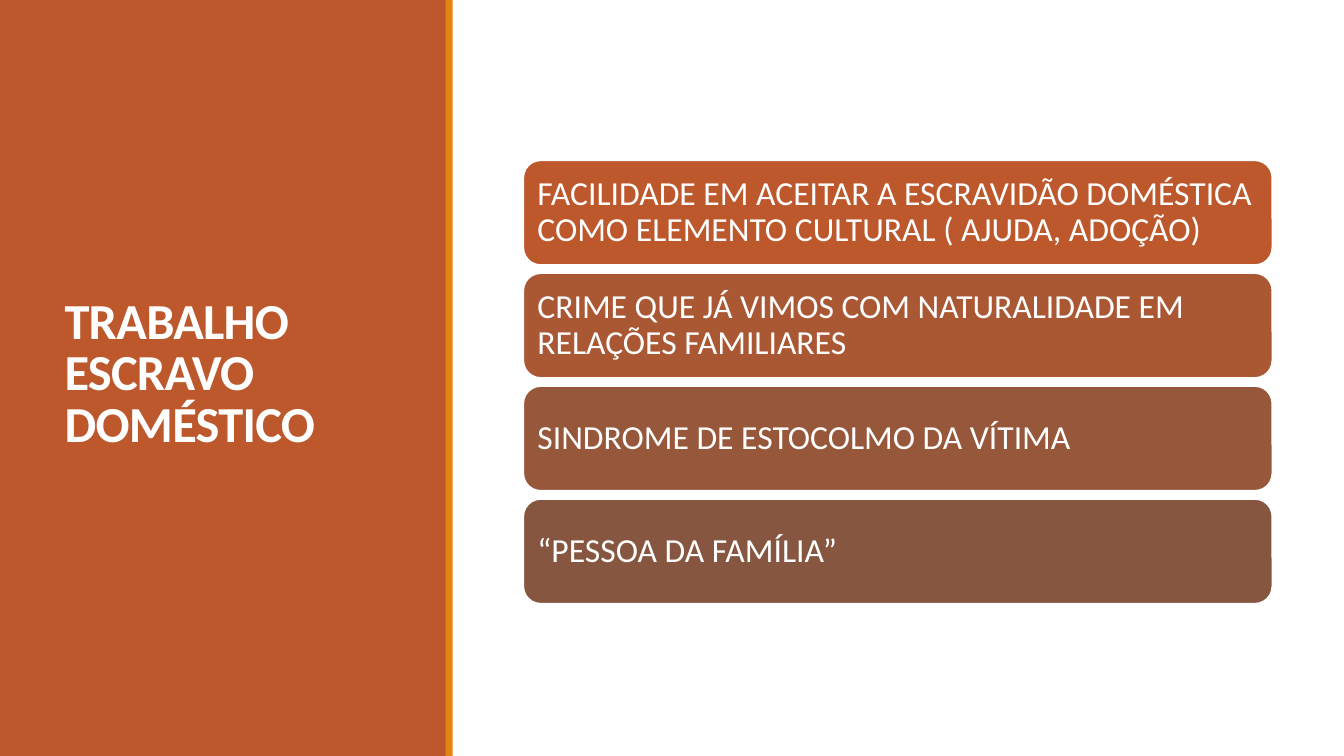
from dataclasses import dataclass

from pptx import Presentation
from pptx.dml.color import RGBColor
from pptx.enum.shapes import MSO_SHAPE
from pptx.enum.text import MSO_ANCHOR, MSO_AUTO_SIZE, PP_ALIGN
from pptx.oxml.ns import qn
from pptx.shapes.autoshape import Shape
from pptx.slide import Slide
from pptx.util import Inches, Pt

WHITE = RGBColor(0xFF, 0xFF, 0xFF)
RUST = RGBColor(0xBD, 0x58, 0x2C)
ORANGE = RGBColor(0xE4, 0x83, 0x12)
FONT = "Calibri"

CARD_LEFT, CARD_TOP, CARD_WIDTH, CARD_HEIGHT = 5.19, 1.59, 7.43, 1.04
CARD_PITCH = 1.12


@dataclass(frozen=True)
class Card:
    text: str
    fill: RGBColor


CARDS = [
    Card("FACILIDADE EM ACEITAR A ESCRAVIDÃO DOMÉSTICA COMO ELEMENTO CULTURAL ( AJUDA, ADOÇÃO)", RUST),
    Card("CRIME QUE JÁ VIMOS COM NATURALIDADE EM RELAÇÕES FAMILIARES", RGBColor(0xAA, 0x58, 0x34)),
    Card("SINDROME DE ESTOCOLMO DA VÍTIMA", RGBColor(0x97, 0x57, 0x3A)),
    Card("“PESSOA DA FAMÍLIA”", RGBColor(0x86, 0x56, 0x40)),
]


def add_block(s: Slide, kind: MSO_SHAPE, left: float, top: float,
              width: float, height: float, fill: RGBColor) -> Shape:
    sp = s.shapes.add_shape(kind, Inches(left), Inches(top), Inches(width), Inches(height))
    sp.shadow.inherit = False
    sp.fill.solid()
    sp.fill.fore_color.rgb = fill
    sp.line.fill.background()
    return sp


def set_text(sp: Shape, text: str, size: float, line_spacing: float, bold: bool = False) -> None:
    tf = sp.text_frame
    tf.text = text
    tf.word_wrap = True
    tf.auto_size = MSO_AUTO_SIZE.NONE
    tf.vertical_anchor = MSO_ANCHOR.MIDDLE
    p = tf.paragraphs[0]
    p.alignment = PP_ALIGN.LEFT
    p.line_spacing = line_spacing
    p.font.name = FONT
    p.font.size = Pt(size)
    p.font.bold = bold
    p.font.color.rgb = WHITE


def add_title(s: Slide) -> None:
    title = s.shapes.title
    title.left, title.top = Inches(0.54), Inches(0.57)
    title.width, title.height = Inches(3.37), Inches(6.31)
    set_text(title, "TRABALHO ESCRAVO DOMÉSTICO", 36, 0.85, bold=True)
    title.element.find(".//" + qn("a:defRPr")).set("spc", "-50")
    # Bring the title in front of the side panel
    title.element.getparent().append(title.element)


def add_card(s: Slide, card: Card, top: float) -> None:
    sp = add_block(s, MSO_SHAPE.ROUNDED_RECTANGLE, CARD_LEFT, top, CARD_WIDTH, CARD_HEIGHT, card.fill)
    sp.line.color.rgb = WHITE
    sp.line.width = Pt(1.25)
    set_text(sp, card.text, 24, 0.9)
    tf = sp.text_frame
    # The rounded corners already inset the text by about 0.05 in
    tf.margin_left = tf.margin_right = Inches(0.09)
    tf.margin_top = tf.margin_bottom = Inches(0.09)


def main() -> None:
    prs = Presentation()
    prs.slide_width, prs.slide_height = Inches(13.33), Inches(7.5)
    s = prs.slides.add_slide(prs.slide_layouts[5])
    s.background.fill.solid()
    s.background.fill.fore_color.rgb = WHITE

    add_block(s, MSO_SHAPE.RECTANGLE, 0, 0, 4.43, 7.5, RUST)
    add_title(s)
    add_block(s, MSO_SHAPE.RECTANGLE, 4.42, 0, 0.07, 7.5, ORANGE)
    for i, card in enumerate(CARDS):
        add_card(s, card, CARD_TOP + i * CARD_PITCH)

    prs.save("out.pptx")


if __name__ == "__main__":
    main()
